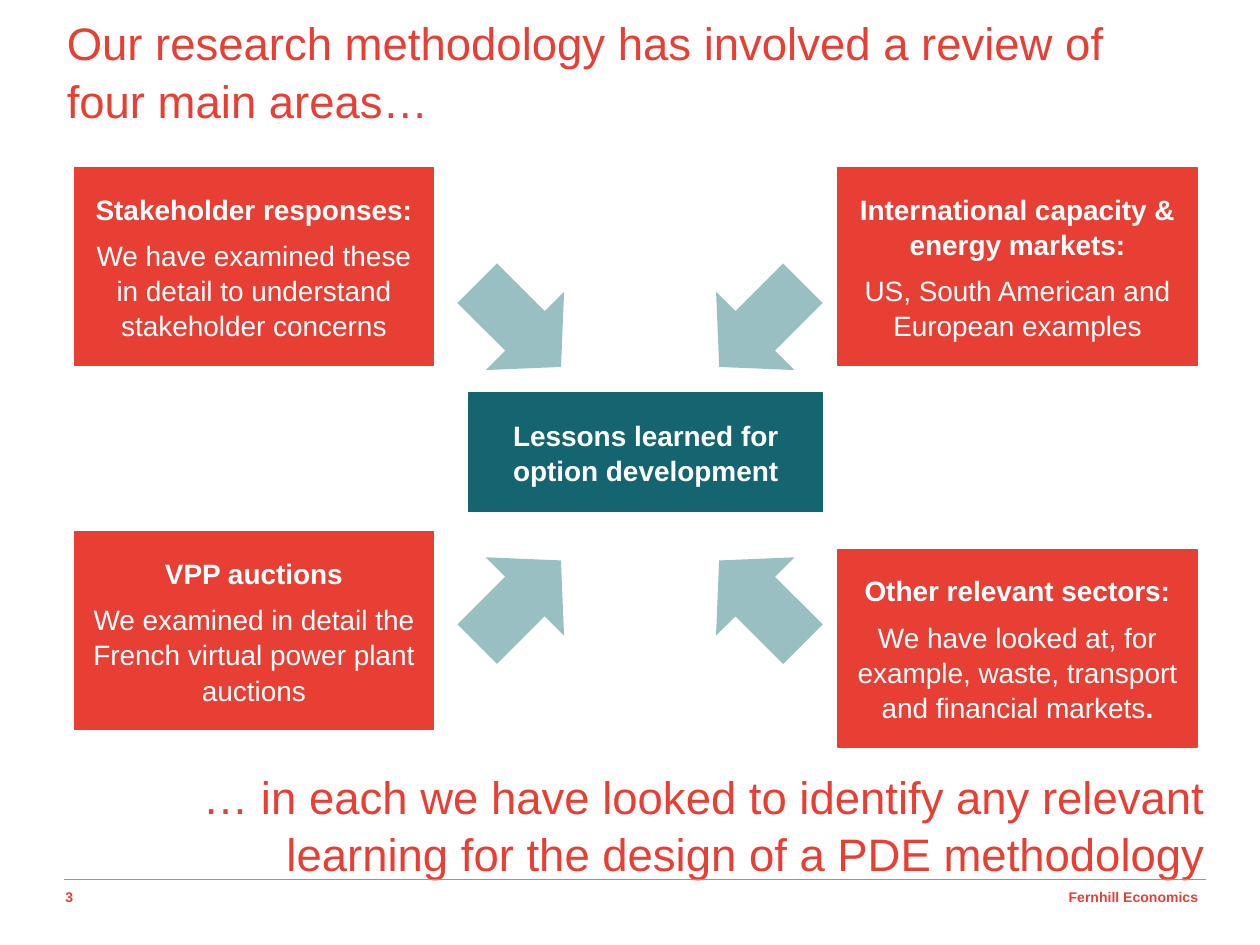
import pptx
import pptx.dml.color
import pptx.enum.shapes
import pptx.enum.text
import pptx.util
from lxml import etree

Inches, Pt = pptx.util.Inches, pptx.util.Pt
SHAPE = pptx.enum.shapes.MSO_SHAPE
ALIGN = pptx.enum.text.PP_ALIGN
ANCHOR = pptx.enum.text.MSO_ANCHOR
RED, TEAL, PALE, GREY, WHITE = "E83F35", "156570", "99BFC2", "969696", "FFFFFF"

# Grid: left edges of the columns and tops of the rows, in inches
BOX_COLUMNS, BOX_ROW = (0.59, 6.65), 1.33
ARROW_COLUMNS, ARROW_ROWS = (3.65, 5.57), (2.14, 4.34)
BOX_WIDTH, BOX_HEIGHT = 2.85, 1.57


def rgb(colour):
    return pptx.dml.color.RGBColor.from_string(colour)


def write(shape, paragraphs, size, colour, align, anchor=ANCHOR.TOP, gap=0):
    """Fill a shape with paragraphs, each a list of (text, bold) runs."""
    frame = shape.text_frame
    frame.word_wrap = True
    frame.auto_size = pptx.enum.text.MSO_AUTO_SIZE.NONE
    frame.vertical_anchor = anchor
    for index, runs in enumerate(paragraphs):
        paragraph = frame.add_paragraph() if index else frame.paragraphs[0]
        paragraph.alignment = align
        paragraph.line_spacing = 1.05
        paragraph.space_before = paragraph.space_after = Pt(gap)
        paragraph.font.name, paragraph.font.size = "Arial", Pt(size)
        paragraph.font.color.rgb = rgb(colour)
        for text, bold in runs:
            run = paragraph.add_run()
            run.text, run.font.bold = text, bold


presentation = pptx.Presentation()
presentation.slide_width, presentation.slide_height = Inches(10), Inches(7.5)
slide = presentation.slides.add_slide(presentation.slide_layouts[5])

# Title
title = slide.shapes.title
title.left, title.top = Inches(0.43), Inches(0.05)
title.width, title.height = Inches(9.08), Inches(0.75)
write(title, [[("Our research methodology has involved a review of four main areas…", False)]],
      26, RED, ALIGN.LEFT)

# Arrows pointing at the centre, by row and column
for top, angles in zip(ARROW_ROWS, ((45, 135), (315, 225))):
    for left, angle in zip(ARROW_COLUMNS, angles):
        arrow = slide.shapes.add_shape(SHAPE.RIGHT_ARROW, Inches(left), Inches(top),
                                       Inches(0.94), Inches(0.88))
        arrow.adjustments[0], arrow.adjustments[1] = 0.505, 0.46
        arrow.rotation = angle
        arrow.shadow.inherit = False
        arrow.fill.solid()
        arrow.fill.fore_color.rgb = rgb(PALE)
        arrow.line.fill.background()

# Four research areas and the central conclusion
left_column, right_column = BOX_COLUMNS
boxes = [
    (left_column, BOX_ROW, BOX_WIDTH, BOX_HEIGHT, RED,
     [[("Stakeholder responses:", True)],
      [("We have examined these in detail to understand stakeholder concerns", False)]]),
    (right_column, BOX_ROW, BOX_WIDTH, BOX_HEIGHT, RED,
     [[("International capacity & energy markets:", True)],
      [("US, South American and European examples", False)]]),
    (left_column, 4.22, BOX_WIDTH, BOX_HEIGHT, RED,
     [[("VPP auctions", True)],
      [("We examined in detail the French virtual power plant auctions", False)]]),
    (right_column, 4.36, BOX_WIDTH, BOX_HEIGHT, RED,
     [[("Other relevant sectors:", True)],
      [("We have looked at, for example, waste, transport and financial markets", False),
       (".", True)]]),
    (3.72, 3.12, 2.81, 0.94, TEAL,
     [[("Lessons learned for option development", True)]]),
]
for left, top, width, height, colour, paragraphs in boxes:
    box = slide.shapes.add_shape(SHAPE.RECTANGLE, Inches(left), Inches(top),
                                 Inches(width), Inches(height))
    box.shadow.inherit = False
    box.fill.solid()
    box.fill.fore_color.rgb = box.line.color.rgb = rgb(colour)
    box.line.width = Pt(0.75)
    write(box, paragraphs, 16, WHITE, ALIGN.CENTER, ANCHOR.MIDDLE, gap=3.2)

# Closing statement, page number and footer
texts = [
    (0.59, 6.03, 9.08, 0.55, 26, False, ALIGN.RIGHT,
     "… in each we have looked to identify any relevant learning "
     "for the design of a PDE methodology"),
    (0.42, 7, 0.37, 0.25, 8, True, ALIGN.LEFT, "3"),
    (7.2, 7, 2.41, 0.23, 8, True, ALIGN.RIGHT, "Fernhill Economics"),
]
for left, top, width, height, size, bold, align, text in texts:
    text_box = slide.shapes.add_textbox(Inches(left), Inches(top), Inches(width), Inches(height))
    write(text_box, [[(text, bold)]], size, RED, align)

# Footer rule
rule = slide.shapes.add_connector(pptx.enum.shapes.MSO_CONNECTOR.STRAIGHT,
                                  Inches(0.51), Inches(6.98), Inches(9.57), Inches(6.98))
rule.line.color.rgb = rgb(GREY)
rule.line.width = Pt(0.75)
etree.SubElement(rule._element.spPr, pptx.oxml.ns.qn("a:effectLst"))

presentation.save("out.pptx")
